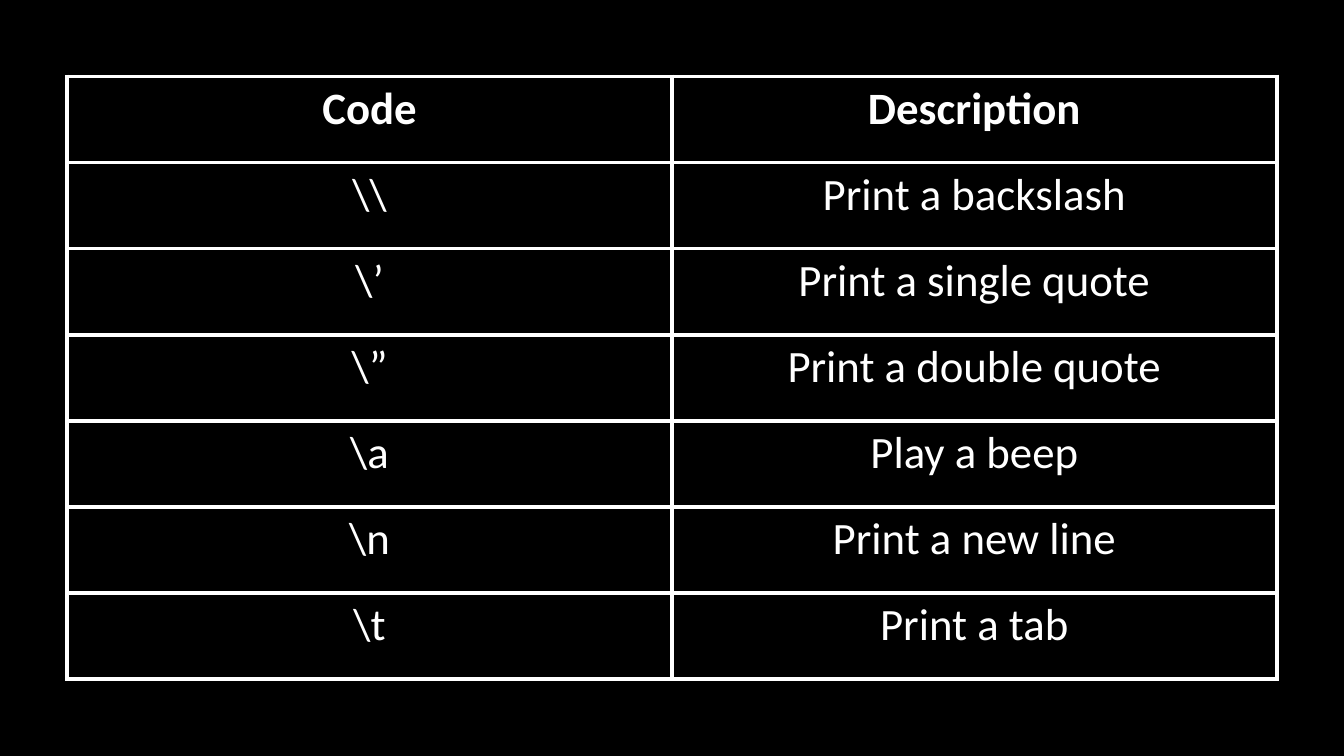
from lxml import etree
from pptx import Presentation
from pptx import util as u
from pptx.dml import color
from pptx.enum import text
from pptx.oxml import ns

COLOURS = {"black": "000000", "white": "FFFFFF"}

ESCAPE_CODES = [
    ("Code", "Description"),
    (r"\\", "Print a backslash"),
    (r"\’", "Print a single quote"),
    (r"\”", "Print a double quote"),
    (r"\a", "Play a beep"),
    (r"\n", "Print a new line"),
    (r"\t", "Print a tab"),
]


class SlideBuilder:
    font_name = "Calibri"
    font_size = 32
    border_width = 3

    def __init__(self, page):
        self.page = page

    def paint(self, fill, colour):
        fill.solid()
        fill.fore_color.rgb = color.RGBColor.from_string(COLOURS[colour])

    def background(self, colour):
        self.paint(self.page.background.fill, colour)

    def borders(self, cell, colour):
        properties = cell._tc.get_or_add_tcPr()
        for side in ("lnL", "lnR", "lnT", "lnB"):
            line = etree.SubElement(properties, ns.qn(f"a:{side}"),
                                    w=str(u.Pt(self.border_width)))
            solid = etree.SubElement(line, ns.qn("a:solidFill"))
            etree.SubElement(solid, ns.qn("a:srgbClr"), val=COLOURS[colour])

    def cell(self, cell, wording, bold):
        # Border lines come before the fill in the cell properties
        self.borders(cell, "white")
        self.paint(cell.fill, "black")
        para = cell.text_frame.paragraphs[0]
        para.text = wording
        para.alignment = text.PP_ALIGN.CENTER
        for span in para.runs:
            span.font.name = self.font_name
            span.font.size = u.Pt(self.font_size)
            span.font.bold = bold
            self.paint(span.font.fill, "white")

    def table(self, rows, left, top, width, row_height):
        frame = self.page.shapes.add_table(
            len(rows), len(rows[0]), u.Pt(left), u.Pt(top),
            u.Pt(width), u.Pt(row_height * len(rows)))
        grid = frame.table
        grid.horz_banding = False
        for row_index, row in enumerate(rows):
            for column_index, wording in enumerate(row):
                self.cell(grid.cell(row_index, column_index), wording,
                          bold=row_index == 0)


def main():
    deck = Presentation()
    deck.slide_width, deck.slide_height = u.Pt(960), u.Pt(540)
    blank_layout = deck.slide_layouts[6]
    builder = SlideBuilder(deck.slides.add_slide(blank_layout))

    # Black page with the table of escape codes
    builder.background("black")
    builder.table(ESCAPE_CODES, left=48, top=54.6, width=864, row_height=61.5)

    deck.save("out.pptx")


if __name__ == "__main__":
    main()
